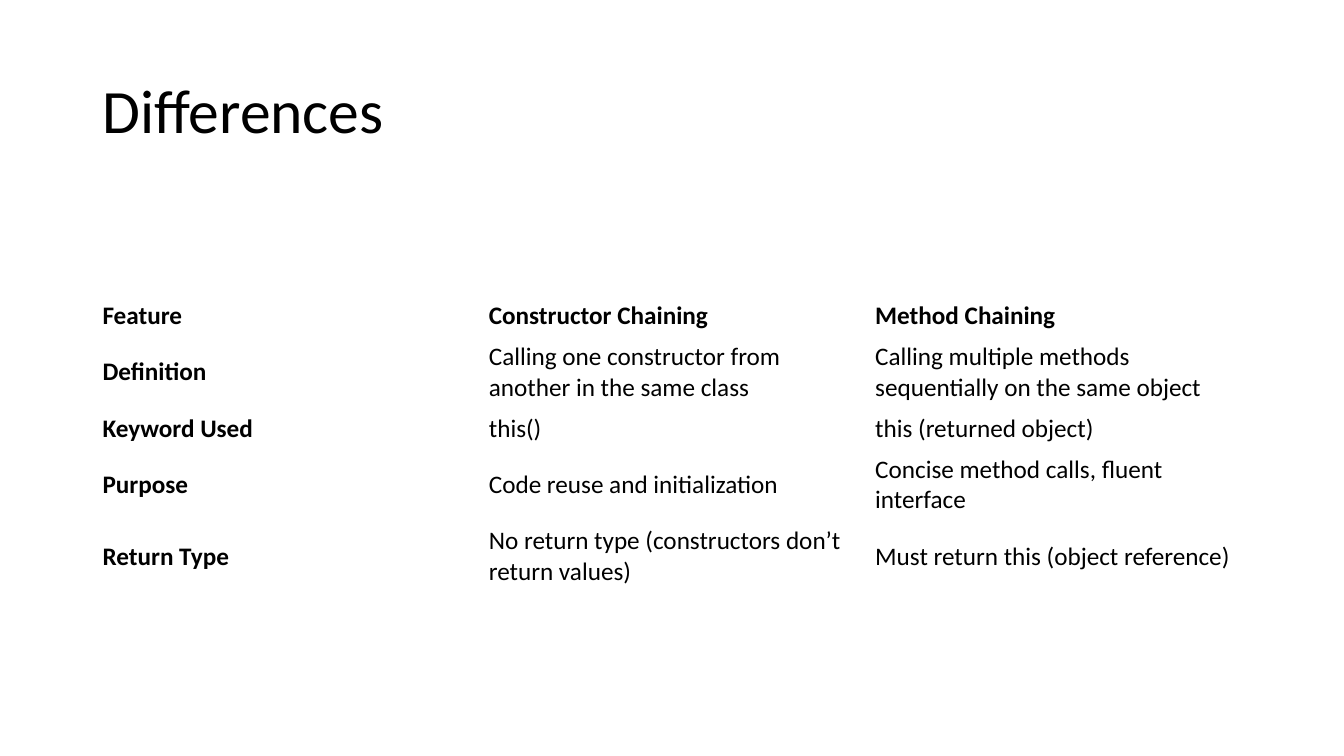
from dataclasses import dataclass

from pptx import Presentation
from pptx import util as u
from pptx.dml import color
from pptx.enum import text


@dataclass(frozen=True)
class Theme:
    font: str = "Calibri"
    ink: str = "000000"
    paper: str = "FFFFFF"
    title: int = 44
    body: int = 18


class Page:
    """Holds the theme and the current slide."""

    def __init__(self, slide, theme):
        self.slide = slide
        self.theme = theme
        fill = slide.background.fill
        fill.solid()
        fill.fore_color.rgb = color.RGBColor.from_string(theme.paper)

    def run(self, para, words, size, bold=False):
        run = para.add_run()
        run.text = words
        font = run.font
        font.name, font.size, font.bold = self.theme.font, u.Pt(size), bold
        font.color.rgb = color.RGBColor.from_string(self.theme.ink)

    def title(self, words, left, top, width, height):
        box = self.slide.shapes.add_textbox(
            u.Cm(left), u.Cm(top), u.Cm(width), u.Cm(height))
        frame = box.text_frame
        frame.word_wrap = True
        frame.vertical_anchor = text.MSO_ANCHOR.MIDDLE
        para = frame.paragraphs[0]
        para.line_spacing = 0.9
        self.run(para, words, self.theme.title)

    def table(self, rows, heights, left, top, width):
        count = len(rows[0])
        grid = self.slide.shapes.add_table(
            len(rows), count, u.Cm(left), u.Cm(top),
            u.Cm(width), u.Cm(sum(heights))).table
        grid.first_row = grid.horz_banding = False
        for col in grid.columns:
            col.width = u.Cm(width / count)
        for r, (row, height) in enumerate(zip(rows, heights)):
            grid.rows[r].height = u.Cm(height)
            for c, words in enumerate(row):
                cell = grid.cell(r, c)
                cell.fill.background()
                cell.vertical_anchor = text.MSO_ANCHOR.MIDDLE
                # The first row and first column are headings
                self.run(cell.text_frame.paragraphs[0], words,
                         self.theme.body, bold=r == 0 or c == 0)


ROWS = [
    ("Feature", "Constructor Chaining", "Method Chaining"),
    ("Definition", "Calling one constructor from another in the same class",
     "Calling multiple methods sequentially on the same object"),
    ("Keyword Used", "this()", "this (returned object)"),
    ("Purpose", "Code reuse and initialization",
     "Concise method calls, fluent interface"),
    ("Return Type", "No return type (constructors don’t return values)",
     "Must return this (object reference)"),
]
ONE, TWO = 1.03, 1.81  # row heights for one and two lines of text
LEFT, WIDTH = 2.33, 29.21


def main():
    deck = Presentation()
    deck.slide_width, deck.slide_height = u.Cm(33.87), u.Cm(19.05)
    page = Page(deck.slides.add_slide(deck.slide_layouts[6]), Theme())

    # Heading
    page.title("Differences", LEFT, 1.01, WIDTH, 3.68)

    # Comparison table
    page.table(ROWS, [ONE, TWO, ONE, TWO, TWO], LEFT, 7.44, WIDTH)

    deck.save("out.pptx")


if __name__ == "__main__":
    main()
